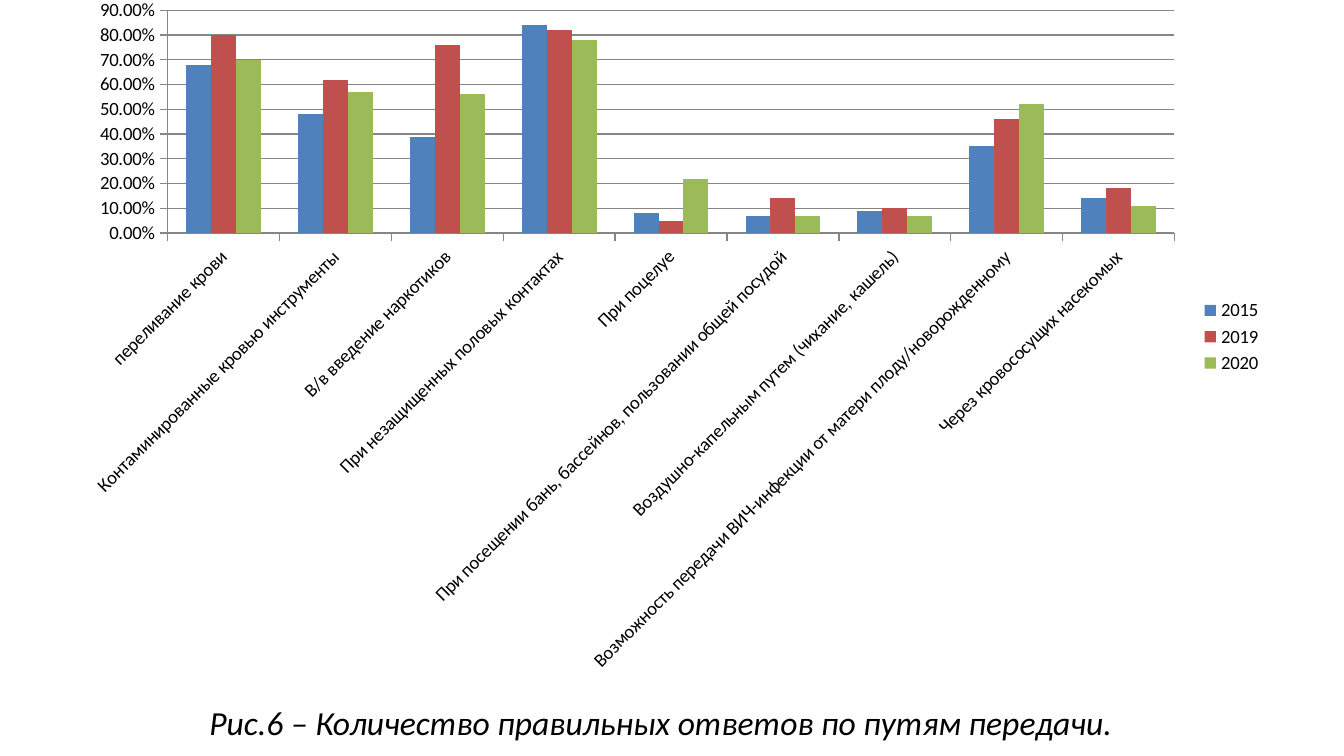
from dataclasses import dataclass

from pptx import Presentation
from pptx.chart.data import CategoryChartData
from pptx.dml.color import RGBColor
from pptx.enum.chart import XL_CHART_TYPE, XL_LEGEND_POSITION, XL_TICK_MARK
from pptx.enum.text import MSO_AUTO_SIZE
from pptx.util import Inches, Pt

ROUTES = [
    "переливание крови",
    "Контаминированные кровью инструменты",
    "В/в введение наркотиков",
    "При незащищенных половых контактах",
    "При поцелуе",
    "При посещении бань, бассейнов, пользовании общей посудой",
    "Воздушно-капельным путем (чихание, кашель)",
    "Возможность передачи ВИЧ-инфекции от матери плоду/новорожденному",
    "Через кровососущих насекомых",
]
ANSWERS = {
    "2015": [0.68, 0.48, 0.39, 0.84, 0.08, 0.07, 0.09, 0.35, 0.14],
    "2019": [0.8, 0.62, 0.76, 0.82, 0.05, 0.14, 0.1, 0.46, 0.18],
    "2020": [0.7, 0.57, 0.56, 0.78, 0.22, 0.07, 0.07, 0.52, 0.11],
}


@dataclass(frozen=True)
class Theme:
    """Colours, font and type sizes of the deck."""

    font: str = "Calibri"
    ink: RGBColor = RGBColor(0, 0, 0)
    rule: RGBColor = RGBColor(0x86, 0x86, 0x86)
    years: tuple = tuple(map(RGBColor.from_string, ("4F81BD", "C0504D", "9BBB59")))
    label_size: Pt = Pt(10)
    caption_size: Pt = Pt(18)
    hairline: Pt = Pt(0.75)


class Page:
    """Current slide with its style; lengths are percentages of the slide's size."""

    def __init__(self, deck, theme):
        """Add a blank slide to the deck."""
        self.deck = deck
        self.theme = theme
        self.slide = deck.slides.add_slide(deck.slide_layouts[6])

    def frame(self, left, top, width, height):
        """Turn percentages into slide lengths."""
        across, down = self.deck.slide_width / 100, self.deck.slide_height / 100
        return int(left * across), int(top * down), int(width * across), int(height * down)

    def style(self, font, size):
        """Apply the theme's typeface and ink."""
        font.name = self.theme.font
        font.size = size
        font.color.rgb = self.theme.ink

    def rule(self, line):
        """Draw a chart line as a thin grey rule."""
        line.color.rgb = self.theme.rule
        line.width = self.theme.hairline

    def column_chart(self, place, categories, series):
        """Add a clustered column chart of percentages."""
        data = CategoryChartData(number_format="0.00%")
        data.categories = categories
        for name, values in series.items():
            data.add_series(name, values)
        chart = self.slide.shapes.add_chart(
            XL_CHART_TYPE.COLUMN_CLUSTERED, *self.frame(*place), data
        ).chart
        self.style(chart.font, self.theme.label_size)
        chart.has_title = False
        chart.has_legend = True
        chart.legend.position = XL_LEGEND_POSITION.RIGHT
        chart.legend.include_in_layout = False

        plot = chart.plots[0]
        plot.gap_width = 150
        plot.overlap = 0
        plot.vary_by_categories = False
        for bars, colour in zip(plot.series, self.theme.years):
            bars.format.fill.solid()
            bars.format.fill.fore_color.rgb = colour

        for axis in (chart.category_axis, chart.value_axis):
            axis.major_tick_mark = XL_TICK_MARK.OUTSIDE
            axis.minor_tick_mark = XL_TICK_MARK.NONE
            self.rule(axis.format.line)
        chart.value_axis.has_major_gridlines = True
        self.rule(chart.value_axis.major_gridlines.format.line)
        labels = chart.value_axis.tick_labels
        labels.number_format = "0.00%"
        labels.number_format_is_linked = False

    def caption(self, place, text):
        """Add an italic caption."""
        box = self.slide.shapes.add_textbox(*self.frame(*place))
        box.text_frame.word_wrap = True
        box.text_frame.auto_size = MSO_AUTO_SIZE.SHAPE_TO_FIT_TEXT
        box.text_frame.text = text
        for span in box.text_frame.paragraphs[0].runs:
            self.style(span.font, self.theme.caption_size)
            span.font.italic = True


def main():
    """Build and save the deck."""
    deck = Presentation()
    deck.slide_width = Inches(10)
    deck.slide_height = deck.slide_width * 9 // 16
    page = Page(deck, Theme())
    page.column_chart((5.1, -1.5, 89.8, 92.1), ROUTES, ANSWERS)
    page.caption((14.6, 91.95, 70.7, 7.1), "Рис.6 – Количество правильных ответов по путям передачи.")
    deck.save("out.pptx")


if __name__ == "__main__":
    main()
